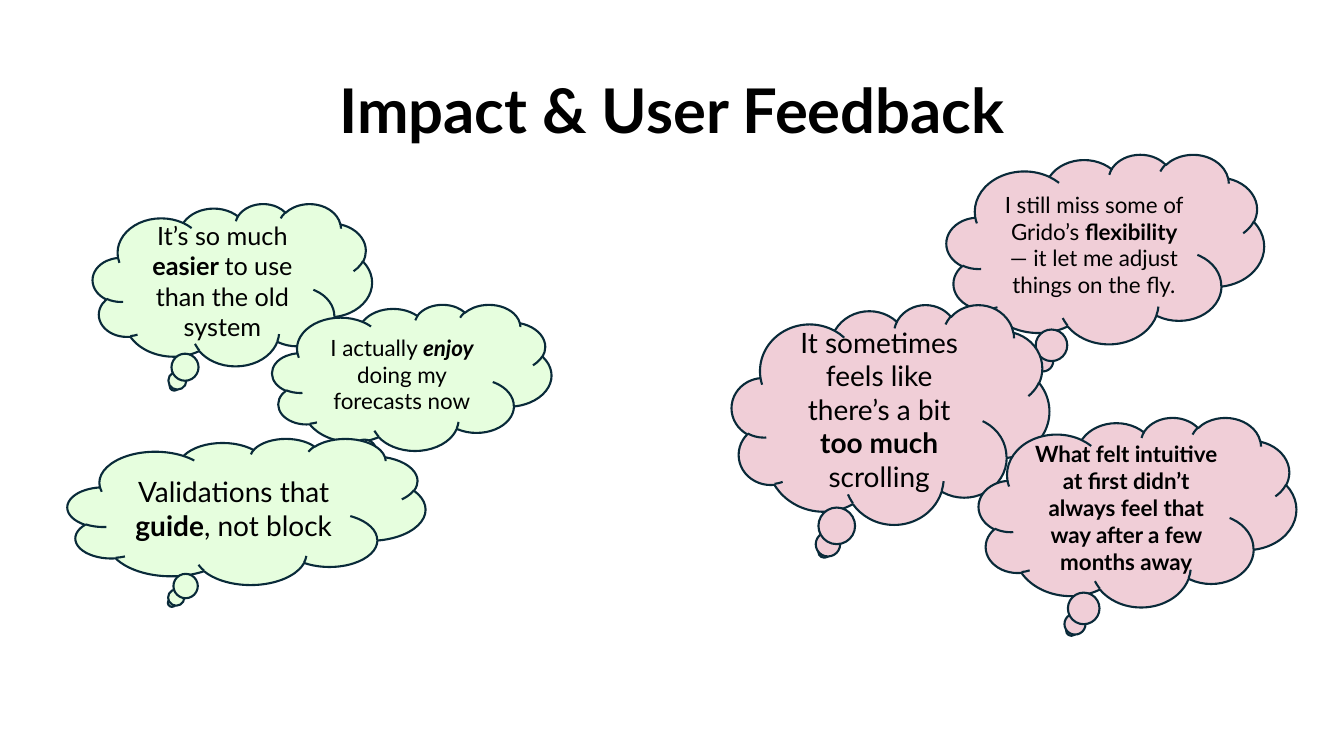
import dataclasses

import pptx
import pptx.dml.color
import pptx.enum.shapes
import pptx.enum.text
import pptx.util

WIDE, HIGH = pptx.util.Inches(13.333), pptx.util.Inches(7.5)
HUES = {"ink": "000000", "edge": "092A39", "good": "E6FEDE", "bad": "F0CED7"}
LOOKS = {"plain": {}, "bold": {"bold": True}, "keen": {"bold": True, "italic": True}}
FRAME = {"word_wrap": True, "vertical_anchor": pptx.enum.text.MSO_ANCHOR.MIDDLE}


@dataclasses.dataclass(frozen=True)
class Box:
    """Left, top, width and height in percent of the slide."""
    left: float
    top: float
    width: float
    height: float

    def place(self) -> tuple[int, int, int, int]:
        return (int(WIDE * self.left / 100), int(HIGH * self.top / 100),
                int(WIDE * self.width / 100), int(HIGH * self.height / 100))


@dataclasses.dataclass(frozen=True)
class Quote:
    box: Box
    mood: str
    size: int
    words: tuple[tuple[str, str], ...]


TITLE = Quote(Box(6.9, 5.33, 86.25, 19.33), "", 44,
              (("Impact & User Feedback", "bold"),))

QUOTES = (
    # Praise
    Quote(Box(6.9, 26.93, 20.78, 21.47), "good", 18,
          (("It’s so much ", "plain"), ("easier ", "bold"),
           ("to use than the old system", "plain"))),
    Quote(Box(20.25, 40.27, 20.78, 19.33), "good", 16,
          (("I actually ", "plain"), ("enjoy ", "keen"),
           ("doing my forecasts now", "plain"))),
    Quote(Box(5.03, 58, 26.63, 19.33), "good", 20,
          (("Validations that ", "plain"), ("guide", "bold"),
           (", not block", "plain"))),
    # Complaints
    Quote(Box(70.43, 20.4, 23.63, 25.07), "bad", 16,
          (("I still miss some of Grido’s ", "plain"), ("flexibility ", "bold"),
           ("— it let me adjust things on the fly.", "plain"))),
    Quote(Box(54.45, 40.27, 23.63, 29.07), "bad", 20,
          (("It sometimes feels like there’s a bit ", "plain"),
           ("too much", "bold"), (" scrolling", "plain"))),
    Quote(Box(72.83, 55.2, 23.63, 25.07), "bad", 16,
          (("What felt intuitive at first didn’t always feel that way "
            "after a few months away", "bold"),)),
)


def tint(name: str) -> pptx.dml.color.RGBColor:
    return pptx.dml.color.RGBColor.from_string(HUES[name])


def apply(item: object, style: dict) -> None:
    for key, value in style.items():
        setattr(item, key, value)


def write(shape, quote: Quote, gap: float = 1.0) -> None:
    apply(shape.text_frame, FRAME)
    para = shape.text_frame.paragraphs[0]
    apply(para, {"alignment": pptx.enum.text.PP_ALIGN.CENTER, "line_spacing": gap})
    base = {"name": "Lato", "size": pptx.util.Pt(quote.size),
            "bold": False, "italic": False}
    for text, look in quote.words:
        run = para.add_run()
        run.text = text
        apply(run.font, base | LOOKS[look])
        run.font.color.rgb = tint("ink")


def cloud(slide, quote: Quote) -> None:
    kind = pptx.enum.shapes.MSO_SHAPE.CLOUD_CALLOUT
    shape = slide.shapes.add_shape(kind, *quote.box.place())
    shape.shadow.inherit = False
    shape.fill.solid()
    shape.fill.fore_color.rgb = tint(quote.mood)
    shape.line.color.rgb = tint("edge")
    shape.line.width = pptx.util.Pt(1.5)
    write(shape, quote)


def main() -> None:
    deck = pptx.Presentation()
    apply(deck, {"slide_width": WIDE, "slide_height": HIGH})
    slide = deck.slides.add_slide(deck.slide_layouts[6])

    # Title
    write(slide.shapes.add_textbox(*TITLE.box.place()), TITLE, 0.9)

    # Thought clouds, back to front
    for quote in QUOTES:
        cloud(slide, quote)

    deck.save("out.pptx")


if __name__ == "__main__":
    main()
